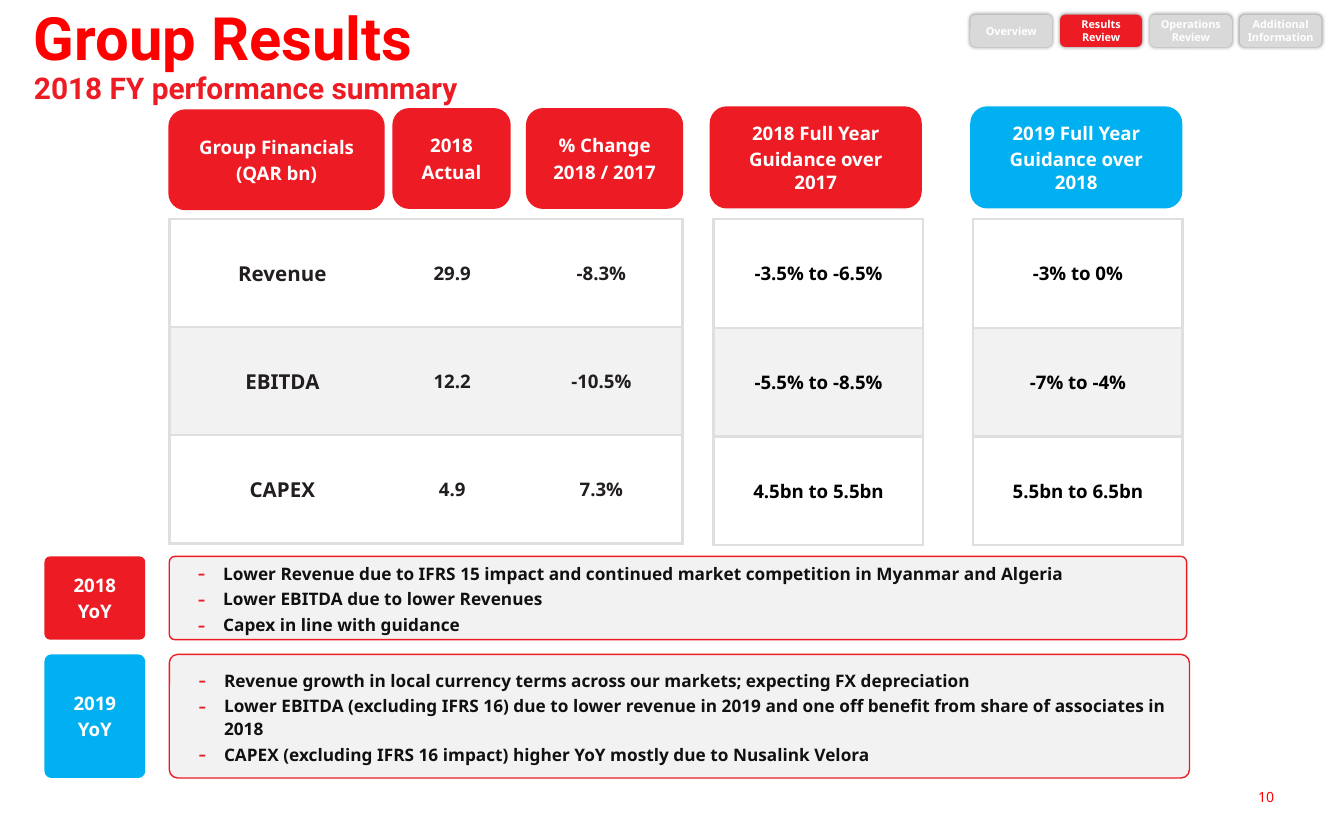
import pptx
import pptx.util
import pptx.dml.color
import pptx.enum.shapes
import pptx.enum.text
import pptx.oxml
import pptx.oxml.ns
from lxml import etree

Pt = pptx.util.Pt
RGB = pptx.dml.color.RGBColor
ALIGN = pptx.enum.text.PP_ALIGN
ANCHOR = pptx.enum.text.MSO_ANCHOR
ROUND = pptx.enum.shapes.MSO_SHAPE.ROUNDED_RECTANGLE

RED = RGB(0xED, 0x1C, 0x24)
PURE = RGB(0xFF, 0, 0)
BLUE = RGB(0, 0xB0, 0xF0)
WHITE = RGB(0xFF, 0xFF, 0xFF)
PALE = RGB(0xF2, 0xF2, 0xF2)
EDGE = RGB(0xDF, 0xDF, 0xE1)
GREY = RGB(0xD9, 0xD9, 0xD9)
SHADE = RGB(0x80, 0x80, 0x80)
INK = RGB(0x11, 0x0F, 0x10)
DARK = RGB(0x22, 0x1E, 0x20)
BLACK = RGB(0, 0, 0)


def add_xml(parent, text):
    space = pptx.oxml.ns.nsdecls("a")
    node = pptx.oxml.parse_xml(text.replace(">", f" {space}>", 1)
                               if "/>" not in text.split(">")[0] + ">"
                               else text.replace("/>", f" {space}/>", 1))
    parent.append(node)
    return node


class Deck:
    head = "Roboto"
    face = "Noto Sans"

    def __init__(self, slide):
        self.slide = slide

    def style(self, para, size, color, bold=True, align=ALIGN.CENTER, face=None):
        para.alignment = align
        font = para.font
        font.name, font.size, font.bold = face or self.face, Pt(size), bold
        font.color.rgb = color

    def place(self, shape, box):
        shape.left, shape.top, shape.width, shape.height = map(Pt, box)

    def inset(self, item, sides):
        (item.margin_left, item.margin_top,
         item.margin_right, item.margin_bottom) = map(Pt, sides)

    def frame(self, shape, sides, anchor=ANCHOR.MIDDLE):
        frame = shape.text_frame
        frame.word_wrap = True
        frame.auto_size = pptx.enum.text.MSO_AUTO_SIZE.NONE
        frame.vertical_anchor = anchor
        self.inset(frame, sides)
        return frame

    def lines(self, frame, texts):
        frame.text = "\n".join(texts)
        return frame.paragraphs

    def title(self, box, rows):
        shape = self.slide.shapes.title
        self.place(shape, box)
        frame = self.frame(shape, (6, 3, 6, 3), ANCHOR.BOTTOM)
        paras = self.lines(frame, [row[0] for row in rows])
        for para, (_, size, color) in zip(paras, rows):
            para.line_spacing = 0.9
            self.style(para, size, color, align=ALIGN.LEFT, face=self.head)

    def card(self, box, texts, fill, size=10, sides=(7.2, 3.6, 7.2, 3.6),
             gap=2, round=0.1667, glow=False):
        shape = self.slide.shapes.add_shape(ROUND, *map(Pt, box))
        shape.adjustments[0] = round
        shape.fill.solid()
        shape.fill.fore_color.rgb = fill
        shape.line.fill.background()
        shape.shadow.inherit = False
        if glow:
            effect = shape._element.spPr.find(pptx.oxml.ns.qn("a:effectLst"))
            add_xml(effect, f'<a:outerShdw blurRad="{Pt(2)}" dist="0" dir="0">'
                            f'<a:srgbClr val="{SHADE}"/></a:outerShdw>')
        frame = self.frame(shape, sides)
        for i, para in enumerate(self.lines(frame, texts)):
            if i:
                para.space_before = Pt(gap)
            self.style(para, size, WHITE)

    def list(self, slot, box, texts):
        shape = self.slide.placeholders[slot]
        self.place(shape, box)
        add_xml(shape._element.spPr,
                '<a:prstGeom prst="roundRect"><a:avLst>'
                '<a:gd name="adj" fmla="val 6800"/></a:avLst></a:prstGeom>')
        shape.fill.solid()
        shape.fill.fore_color.rgb = PALE
        shape.line.color.rgb = RED
        shape.line.width = Pt(0.75)
        frame = self.frame(shape, (0, 0, 0, 0))
        for i, para in enumerate(self.lines(frame, texts)):
            para.line_spacing = 1.1
            para.space_before = Pt(0.8 if i else 0)
            para.space_after = Pt(0.8)
            props = para._p.get_or_add_pPr()
            props.set("marL", str(Pt(28)))
            props.set("indent", str(Pt(-13.7)))
            add_xml(props, f'<a:buClr><a:srgbClr val="{RED}"/></a:buClr>')
            add_xml(props, '<a:buSzPct val="140000"/>')
            add_xml(props, '<a:buChar char="-"/>')
            self.style(para, 9.2, INK, align=ALIGN.LEFT)

    def border(self, cell, first, last):
        props = cell._tc.get_or_add_tcPr()
        for side, shown in (("L", first), ("R", last), ("T", True), ("B", True)):
            paint = (f'<a:solidFill><a:srgbClr val="{EDGE}"/></a:solidFill>'
                     if shown else "<a:noFill/>")
            add_xml(props, f'<a:ln{side} w="{Pt(1.5)}">{paint}</a:ln{side}>')

    def table(self, left, top, widths, high, rows, color, lead=False):
        count = len(widths)
        table = self.slide.shapes.add_table(
            len(rows), count, Pt(left), Pt(top),
            Pt(sum(widths)), Pt(high * len(rows))).table
        table.first_row = table.horz_banding = False
        for col, width in zip(table.columns, widths):
            col.width = Pt(width)
        for r, row in enumerate(rows):
            table.rows[r].height = Pt(high)
            for c, text in enumerate(row):
                cell = table.cell(r, c)
                name = lead and c == 0
                self.border(cell, c == 0, c == count - 1)
                cell.fill.solid()
                cell.fill.fore_color.rgb = PALE if r % 2 else WHITE
                cell.vertical_anchor = ANCHOR.MIDDLE
                self.inset(cell, (6, 3, 0, 3) if name else (1.5, 0, 1.5, 0))
                cell.text = text
                self.style(cell.text_frame.paragraphs[0], 11 if name else 10, color)

    def label(self, box, text):
        shape = self.slide.shapes.add_textbox(*map(Pt, box))
        frame = self.frame(shape, (0, 0, 0, 0), ANCHOR.TOP)
        para = self.lines(frame, [text])[0]
        self.style(para, 7.5, PURE, bold=False, align=ALIGN.RIGHT)


def main():
    show = pptx.Presentation()
    show.slide_width, show.slide_height = Pt(720), Pt(450)
    deck = Deck(show.slides.add_slide(show.slide_layouts[3]))

    deck.title((12.2, 0, 553.7, 59.8), [
        ("Group Results", 32, PURE), ("2018 FY performance summary", 16, RED)])

    tabs = [["Overview"], ["Results", "Review"], ["Operations", "Review"],
            ["Additional", "Information"]]
    for i, texts in enumerate(tabs):
        deck.card((519.8 + 48.1 * i, 7.9, 43.9, 17.3), texts,
                  RED if i == 1 else GREY, 5.8, (2.9, 3.6, 2.9, 3.6), 0, glow=True)

    heads = [
        ((90.2, 58.6, 115.9, 54), ["Group Financials", "(QAR bn)"], RED),
        ((210.2, 57.9, 63.4, 54), ["2018", "Actual"], RED),
        ((281.8, 57.9, 84.2, 54), ["% Change", "2018 / 2017"], RED),
        ((380.2, 57, 113.6, 54.7), ["2018 Full Year", "Guidance over 2017"], RED),
        ((519.8, 57, 113.6, 54.7), ["2019 Full Year", "Guidance over 2018"], BLUE)]
    for box, texts, fill in heads:
        deck.card(box, texts, fill)

    deck.table(90.7, 117.4, [115.2, 72.7, 87.1], 57.9, [
        ["Revenue", "29.9", "-8.3%"],
        ["EBITDA", "12.2", "-10.5%"],
        ["CAPEX", "4.9", "7.3%"]], DARK, lead=True)
    guides = [
        (382.3, ["-3.5% to -6.5%", "-5.5% to -8.5%", "4.5bn to 5.5bn"]),
        (521.3, ["-3% to 0%", "-7% to -4%", "5.5bn to 6.5bn"])]
    for left, texts in guides:
        deck.table(left, 117.4, [112.3], 58.2, [[text] for text in texts], BLACK)

    notes = [
        ("2018", RED, 298.1, 44.6, 545, [
            "Lower Revenue due to IFRS 15 impact and continued market competition "
            "in Myanmar and Algeria",
            "Lower EBITDA due to lower Revenues",
            "Capex in line with guidance"]),
        ("2019", BLUE, 350.6, 66.2, 546.5, [
            "Revenue growth in local currency terms across our markets; "
            "expecting FX depreciation",
            "Lower EBITDA (excluding IFRS 16) due to lower revenue in 2019 and "
            "one off benefit from share of associates in 2018",
            "CAPEX (excluding IFRS 16 impact) higher YoY mostly due to "
            "Nusalink Velora"])]
    for slot, (year, fill, top, high, wide, texts) in enumerate(notes, 1):
        deck.card((23.8, top, 54, high), [year, "YoY"], fill, round=0.068)
        deck.list(slot, (90.7, top, wide, high), texts)

    deck.label((635.8, 422.6, 46.8, 23.8), "10")
    show.save("out.pptx")


if __name__ == "__main__":
    main()
